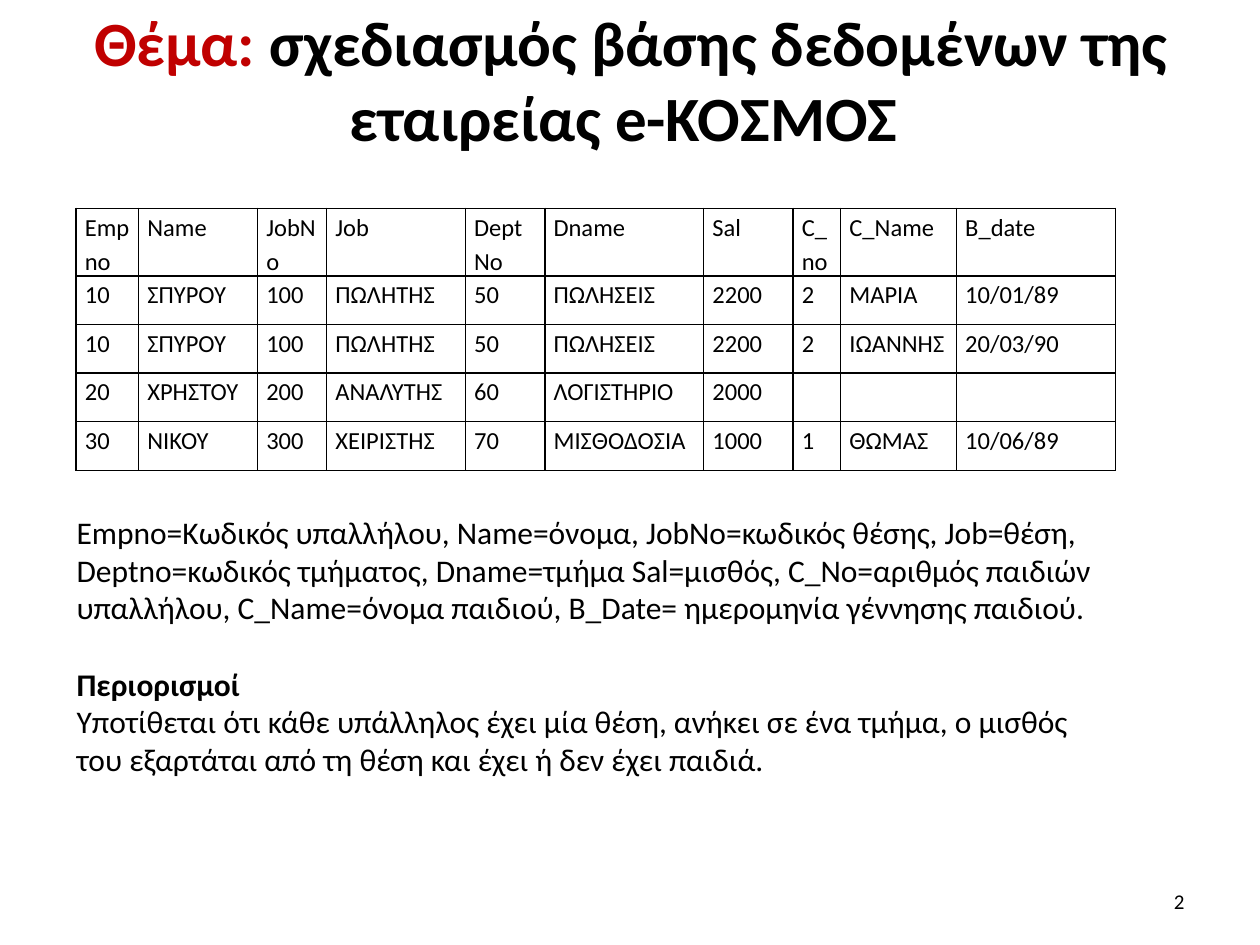
from lxml.etree import SubElement
from pptx import Presentation
from pptx.dml.color import RGBColor
from pptx.enum.text import MSO_ANCHOR as Anchor, MSO_AUTO_SIZE as AutoSize, PP_ALIGN as Align
from pptx.oxml.ns import qn
from pptx.util import Pt

COLORS = {"text": "000000", "accent": "C00000", "border": "000000"}
COLUMN_WIDTHS = [35.7, 68, 39.5, 79.3, 45.4, 90.8, 51.1, 27.2, 66.2, 90.8]
ROW_HEIGHT = 27.8
EMPLOYEES = [
    ["Empno", "Name", "JobNo", "Job", "DeptNo", "Dname", "Sal", "C_no", "C_Name", "B_date"],
    ["10", "ΣΠΥΡΟΥ", "100", "ΠΩΛΗΤΗΣ", "50", "ΠΩΛΗΣΕΙΣ", "2200", "2", "ΜΑΡΙΑ", "10/01/89"],
    ["10", "ΣΠΥΡΟΥ", "100", "ΠΩΛΗΤΗΣ", "50", "ΠΩΛΗΣΕΙΣ", "2200", "2", "ΙΩΑΝΝΗΣ", "20/03/90"],
    ["20", "ΧΡΗΣΤΟΥ", "200", "ΑΝΑΛΥΤΗΣ", "60", "ΛΟΓΙΣΤΗΡΙΟ", "2000", "", "", ""],
    ["30", "ΝΙΚΟΥ", "300", "ΧΕΙΡΙΣΤΗΣ", "70", "ΜΙΣΘΟΔΟΣΙΑ", "1000", "1", "ΘΩΜΑΣ", "10/06/89"],
]
LEGEND = (
    "Empno=Κωδικός υπαλλήλου, Name=όνομα, JobNo=κωδικός θέσης, Job=θέση, "
    "Deptno=κωδικός τμήματος, Dname=τμήμα Sal=μισθός, C_No=αριθμός παιδιών "
    "υπαλλήλου, C_Name=όνομα παιδιού, B_Date= ημερομηνία γέννησης παιδιού."
)
CONSTRAINTS = (
    "Υποτίθεται ότι κάθε υπάλληλος έχει μία θέση, ανήκει σε ένα τμήμα, ο μισθός "
    "του εξαρτάται από τη θέση και έχει ή δεν έχει παιδιά."
)


class SlideBuilder:
    font_name = "Calibri"

    def __init__(self, slide):
        self.slide = slide

    def style(self, font, size, bold=False, color="text"):
        font.name = self.font_name
        font.size = Pt(size)
        font.bold = bold
        font.color.rgb = RGBColor.from_string(COLORS[color])

    def title(self, parts, left, top, width, height):
        """Fill the title placeholder with (text, color name) parts."""
        title = self.slide.shapes.title
        title.left, title.top, title.width, title.height = map(Pt, (left, top, width, height))
        frame = title.text_frame
        frame.auto_size = AutoSize.NONE
        frame.vertical_anchor = Anchor.MIDDLE
        paragraph = frame.paragraphs[0]
        paragraph.alignment = Align.CENTER
        for text, color in parts:
            run = paragraph.add_run()
            run.text = text
            self.style(run.font, 36, True, color)

    def text(self, paragraphs, left, top, width, height, size, align=Align.LEFT, anchor=Anchor.TOP):
        """Add a text box of (text, bold, space before) paragraphs."""
        frame = self.slide.shapes.add_textbox(*map(Pt, (left, top, width, height))).text_frame
        frame.word_wrap = True
        frame.vertical_anchor = anchor
        for index, (text, bold, space_before) in enumerate(paragraphs):
            paragraph = frame.add_paragraph() if index else frame.paragraphs[0]
            paragraph.text = text
            paragraph.alignment = align
            paragraph.space_before = Pt(space_before)
            self.style(paragraph.runs[0].font, size, bold)

    def border(self, cell):
        properties = cell._tc.get_or_add_tcPr()
        for index, side in enumerate(("a:lnL", "a:lnR", "a:lnT", "a:lnB")):
            line = SubElement(properties, qn(side), w=str(Pt(1)))
            fill = SubElement(line, qn("a:solidFill"))
            SubElement(fill, qn("a:srgbClr"), val=COLORS["border"])
            properties.insert(index, line)

    def table(self, rows, widths, left, top, row_height, size):
        table = self.slide.shapes.add_table(
            len(rows), len(widths), Pt(left), Pt(top), Pt(sum(widths)), Pt(row_height * len(rows))
        ).table
        table.first_row = table.horz_banding = False
        for column, width in zip(table.columns, widths):
            column.width = Pt(width)
        for row, values in zip(table.rows, rows):
            row.height = Pt(row_height)
            for cell, value in zip(row.cells, values):
                cell.margin_left = cell.margin_right = Pt(5)
                cell.margin_top = cell.margin_bottom = 0
                cell.fill.background()
                self.border(cell)
                cell.text_frame.text = value
                paragraph = cell.text_frame.paragraphs[0]
                paragraph.line_spacing = 1.15
                for run in paragraph.runs:
                    self.style(run.font, size)


def main():
    deck = Presentation()
    deck.slide_width, deck.slide_height = Pt(720), Pt(540)
    builder = SlideBuilder(deck.slides.add_slide(deck.slide_layouts[5]))
    builder.title(
        [("Θέμα:", "accent"), (" σχεδιασμός βάσης δεδομένων της εταιρείας e-ΚΟΣΜΟΣ ", "text")],
        36.5, 9.5, 648, 71,
    )
    builder.text([("2", False, 0)], 516, 500.5, 168, 28.8, 12, Align.RIGHT, Anchor.MIDDLE)
    builder.table(EMPLOYEES, COLUMN_WIDTHS, 43.5, 119, ROW_HEIGHT, 14)
    builder.text(
        [(LEGEND, False, 0), ("Περιορισμοί", True, 22), (CONSTRAINTS, False, 0)],
        36.7, 289.5, 595.5, 160, 18,
    )
    deck.save("out.pptx")


if __name__ == "__main__":
    main()
